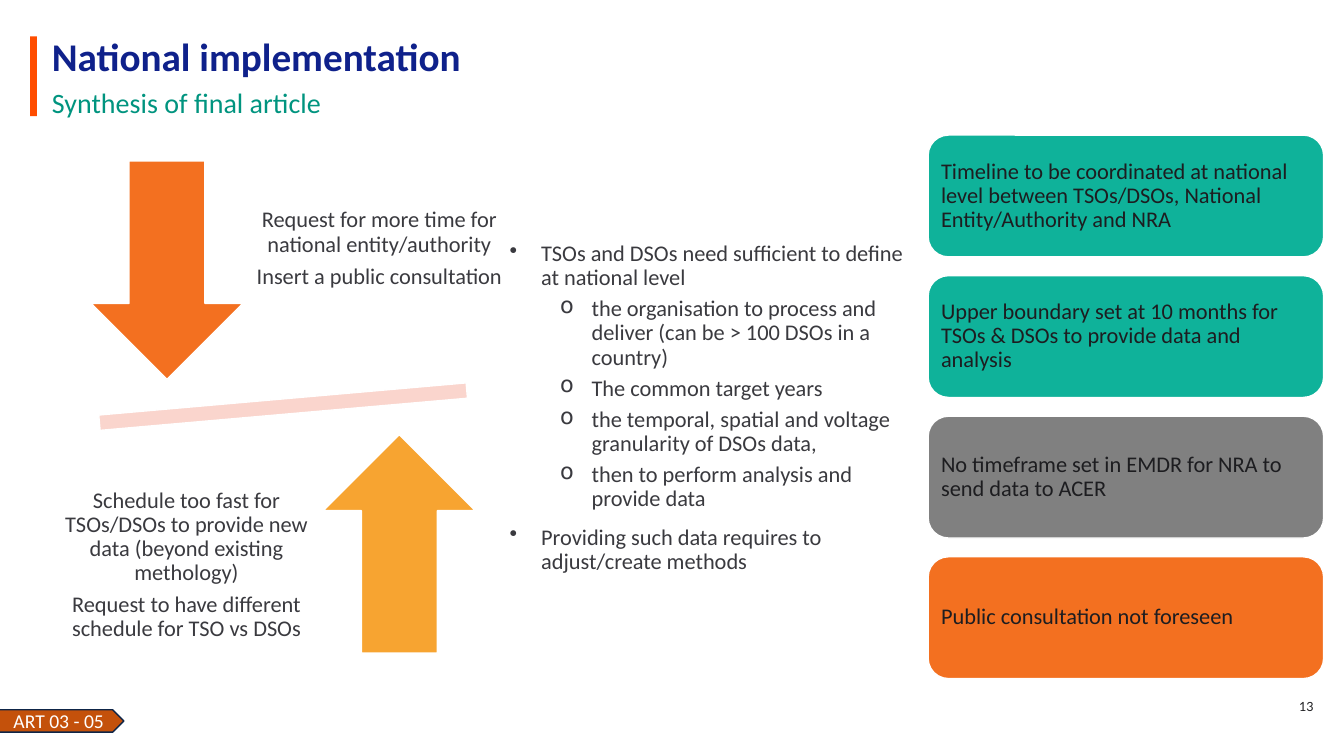
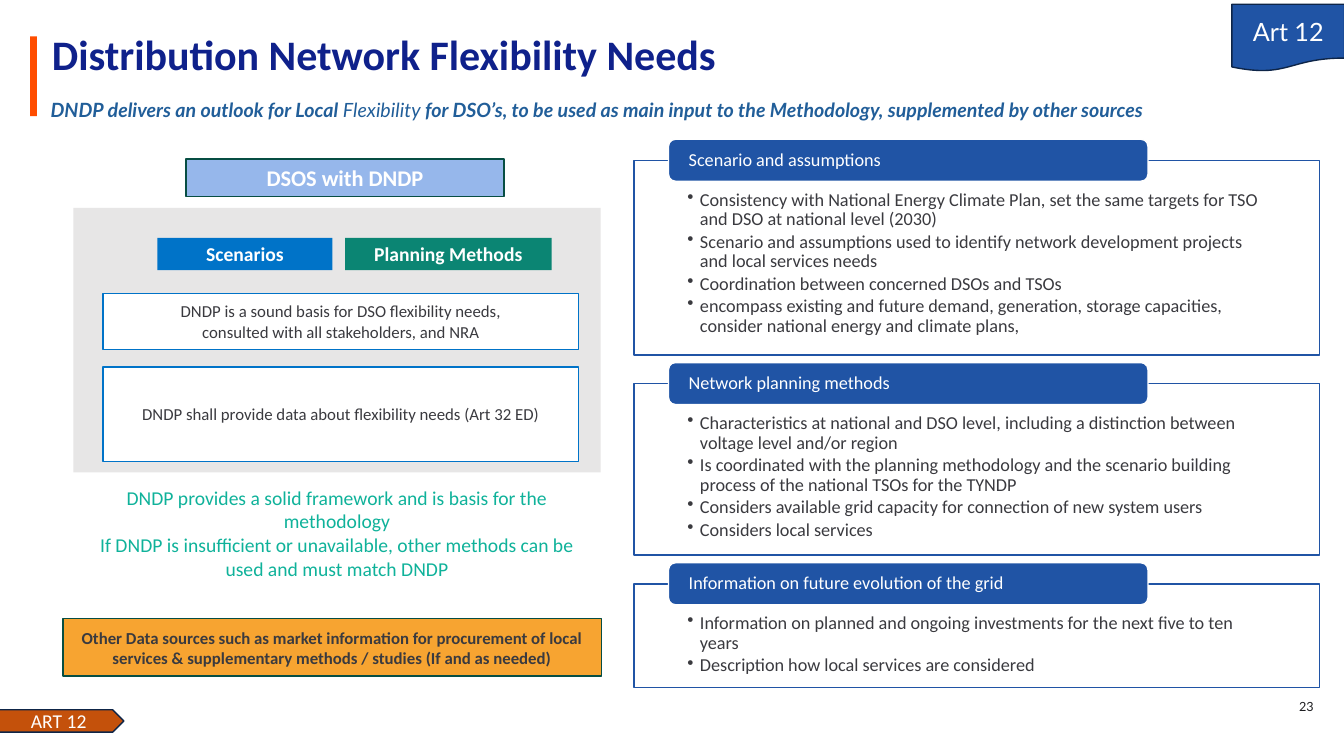
from lxml import etree
from pptx import Presentation
from pptx.dml.color import RGBColor
from pptx.enum import shapes, text
from pptx.oxml import ns
from pptx.util import Pt

NAVY = RGBColor(0x0F, 0x21, 0x8B)
INK = RGBColor(0x3A, 0x3A, 0x3F)
BLACK = RGBColor(0x1D, 0x1D, 0x20)
WHITE = RGBColor(0xFF, 0xFF, 0xFF)
GRAY = RGBColor(0x80, 0x80, 0x80)
PALE = RGBColor(0xE7, 0xE6, 0xE6)
BAR = RGBColor(0xFF, 0x4D, 0x00)
ORANGE = RGBColor(0xF3, 0x70, 0x20)
AMBER = RGBColor(0xF7, 0xA4, 0x31)
RUST = RGBColor(0xC4, 0x51, 0x0B)
PINK = RGBColor(0xFA, 0xD5, 0xCD)
TEAL = RGBColor(0x0F, 0xB2, 0x9A)
JADE = RGBColor(0x00, 0x94, 0x7F)
GREEN = RGBColor(0x0B, 0x85, 0x73)
FOREST = RGBColor(0x07, 0x4E, 0x43)
BLUE = RGBColor(0x20, 0x54, 0xA5)
AZURE = RGBColor(0x00, 0x73, 0xC8)
SKY = RGBColor(0x96, 0xB7, 0xEB)
STEEL = RGBColor(0x21, 0x5E, 0x99)
DARK = RGBColor(0x0E, 0x25, 0x48)

KIND = shapes.MSO_SHAPE
LEFT, MID, RIGHT = text.PP_ALIGN.LEFT, text.PP_ALIGN.CENTER, text.PP_ALIGN.RIGHT
TOP, HALF = text.MSO_ANCHOR.TOP, text.MSO_ANCHOR.MIDDLE
PAD = (7.2, 3.6, 7.2, 3.6)
DOT = ("•", 22.5, 22.5, 10)
RING = ("o", 58.5, 22.5, 5)
SMALL = ("•", 9, 9, 0)


class Deck:
    def __init__(self):
        self.file = Presentation()
        self.file.slide_width, self.file.slide_height = Pt(960), Pt(540)
        self.slide = None

    def page(self, title, size, number, label):
        self.slide = self.file.slides.add_slide(self.file.slide_layouts[6])
        self.text((486, 491, 459.5, 29), [number], 9, BLACK, font="Lato",
                  align=RIGHT, anchor=HALF, lead=Pt(9))
        self.shape(KIND.RECTANGLE, (21.5, 26, 5, 57), BAR)
        self.text((30, 26.5, 915, 28), [title], size, NAVY, bold=True,
                  anchor=HALF, lead=Pt(32))
        tag = self.shape(KIND.PENTAGON, (-0.5, 507, 89, 16), RUST, DARK)
        self.put(tag, [label], 14, WHITE, align=MID, anchor=HALF)

    def shape(self, kind, area, fill, line=None):
        item = self.slide.shapes.add_shape(kind, *map(Pt, area))
        item.shadow.inherit = False
        item.fill.solid()
        item.fill.fore_color.rgb = fill
        if line is None:
            item.line.fill.background()
        else:
            item.line.color.rgb = line
            item.line.width = Pt(1)
        return item

    def text(self, area, lines, size, color, **look):
        item = self.slide.shapes.add_textbox(*map(Pt, area))
        self.put(item, lines, size, color, **look)
        return item

    def put(self, item, lines, size, color, font="Calibri", bold=False,
            slant=False, align=LEFT, anchor=TOP, pad=PAD, lead=None, after=0):
        frame = item.text_frame
        frame.word_wrap = True
        frame.vertical_anchor = anchor
        (frame.margin_left, frame.margin_top,
         frame.margin_right, frame.margin_bottom) = map(Pt, pad)
        for i, line in enumerate(lines):
            para = frame.add_paragraph() if i else frame.paragraphs[0]
            para.alignment = align
            para.space_after = Pt(after)
            if lead:
                para.line_spacing = lead
            for part in line.split("|"):
                run = para.add_run()
                run.text = part
                run.font.name, run.font.size = font, Pt(size)
                run.font.bold, run.font.italic = bold, slant
                run.font.color.rgb = color

    def mark(self, item, marks):
        for i, (para, mark) in enumerate(zip(item.text_frame.paragraphs, marks)):
            sign, left, hang, gap = mark
            if i:
                para.space_before = Pt(gap)
            props = para._p.get_or_add_pPr()
            props.set("marL", str(Pt(left)))
            props.set("indent", str(-Pt(hang)))
            etree.SubElement(props, ns.qn("a:buChar")).set("char", sign)

    def label(self, area, fill, line, lines, size, color, bold=False):
        item = self.shape(KIND.RECTANGLE, area, fill, line)
        self.put(item, lines, size, color, bold=bold, align=MID, anchor=HALF)

    def card(self, top, fill, words):
        item = self.shape(KIND.ROUNDED_RECTANGLE, (663, top, 282.5, 87), fill, WHITE)
        self.put(item, [words], 16, BLACK, anchor=HALF, pad=(5,) * 4, lead=0.9)

    def force(self, kind, spot, fill, area, lines):
        self.shape(kind, (*spot, 108.5, 156), fill, WHITE)
        self.text(area, lines, 16, INK, align=MID, anchor=HALF,
                  pad=(8.5,) * 4, lead=0.9, after=5.6)

    def panel(self, top, high, head, lines):
        body = self.shape(KIND.RECTANGLE, (453, top, 489.5, high), WHITE, BLUE)
        self.put(body, lines, 13, INK, pad=(38, 21.5, 38, 7), lead=0.9, after=1.95)
        self.mark(body, [SMALL] * len(lines))
        tab = self.shape(KIND.ROUNDED_RECTANGLE, (477.5, top - 15, 342.5, 30), BLUE, WHITE)
        self.put(tab, [head], 13, WHITE, anchor=HALF, pad=(13, 0, 13, 0), lead=0.9)


def nation(deck):
    deck.page("National implementation", 28, "13", "ART 03 - 05")
    deck.text((30, 54.5, 915, 34.5), ["Synthesis of final article"], 20, JADE,
              anchor=HALF, lead=Pt(26))
    tasks = deck.text((357, 96, 305.5, 391), [
        "TSOs and DSOs need sufficient to define at national level",
        "the organisation to process and deliver (can be > 100 DSOs in a country)",
        "The common target years",
        "the temporal, spatial and voltage granularity of DSOs data,",
        "then to perform analysis and provide data",
        "Providing such data requires to adjust/create methods",
    ], 16, INK, anchor=HALF, lead=0.9)
    deck.mark(tasks, [DOT, *[RING] * 4, DOT])
    beam = deck.shape(KIND.MATH_MINUS, (23, 267, 358.5, 47), PINK, WHITE)
    beam.rotation = 355
    deck.force(KIND.DOWN_ARROW, (65, 115), ORANGE, (173, 96, 196, 163.5), [
        "Request for more time for national entity/authority",
        "Insert a public consultation"])
    deck.force(KIND.UP_ARROW, (231, 310.5), AMBER, (30, 322, 206.5, 163.5), [
        "Schedule too fast for TSOs/DSOs to provide new data (beyond existing methology)",
        "Request to have different schedule for TSO vs DSOs"])
    cards = [
        (TEAL, "Timeline to be coordinated at national level between TSOs/DSOs, "
               "National Entity/Authority and NRA"),
        (TEAL, "Upper boundary set at 10 months for TSOs & DSOs to provide data and analysis"),
        (GRAY, "No timeframe set in EMDR for NRA to send data to ACER"),
        (ORANGE, "Public consultation not foreseen"),
    ]
    for i, (fill, words) in enumerate(cards):
        deck.card(96.5 + 100.4 * i, fill, words)


def needs(deck):
    deck.page("Distribution Network Flexibility Needs", 30, "23", "ART 12")
    deck.shape(KIND.RECTANGLE, (52.5, 148.5, 376.5, 189), PALE)
    labels = [
        ((112.5, 170, 125, 23), AZURE, None, ["Scenarios"], 14, WHITE, True),
        ((246.5, 170, 147.5, 23), GREEN, None, ["Planning Methods"], 14, WHITE, True),
        ((73.5, 262, 340, 67.5), WHITE, AZURE,
         ["DNDP shall provide data about flexibility needs (Art 32 ED)"], 12, INK),
        ((73.5, 209.5, 340, 40), WHITE, AZURE,
         ["DNDP is a sound basis for DSO flexibility needs,",
          "consulted with all stakeholders, and NRA"], 12, INK),
        ((133, 113.5, 227, 27), SKY, FOREST, ["DSOS with DNDP"], 16, WHITE, True),
        ((45, 442, 384.5, 41), AMBER, FOREST,
         ["Other Data sources such as market information for procurement of local "
          "services & supplementary methods / studies (If and as needed)"], 12, INK, True),
    ]
    for label in labels:
        deck.label(*label)
    panels = [
        (139, "Scenario and assumptions", [
            "Consistency with National Energy Climate Plan, set the same targets "
            "for TSO and DSO at national level (2030)",
            "Scenario and assumptions used to identify network development projects "
            "and local services needs",
            "Coordination between concerned DSOs and TSOs",
            "encompass existing and future demand, generation, storage capacities, "
            "consider national energy and climate plans,"]),
        (122.5, "Network planning methods", [
            "Characteristics at national and DSO level, including a distinction "
            "between voltage level and/or region",
            "Is coordinated with the planning methodology and the scenario building "
            "process of the national TSOs for the TYNDP",
            "Considers available grid capacity for connection of new system users",
            "Considers local services"]),
        (74, "Information on future evolution of the grid", [
            "Information on planned and ongoing investments for the next five to ten years",
            "Description how local services are considered"]),
    ]
    top = 114.5
    for high, head, lines in panels:
        deck.panel(top, high, head, lines)
        top += high + 20.5
    deck.text((52.5, 343.5, 376.5, 75), [
        "DNDP provides a solid framework and is basis for the methodology",
        "If DNDP is insufficient or unavailable, other methods can be used and must match DNDP",
    ], 14, TEAL, align=MID)
    flag = deck.shape(KIND.FLOWCHART_DOCUMENT, (880, 3, 80.5, 48), BLUE, DARK)
    deck.put(flag, ["Art 12"], 18, WHITE, font="Lato", align=MID, anchor=HALF)
    lead = deck.text((29, 68.5, 903.5, 80), [
        "DNDP delivers an outlook for Local |Flexibility| for DSO’s, to be used as main "
        "input to the Methodology, supplemented by other sources",
    ], 14, STEEL, font="Lato", bold=True, slant=True, lead=0.9)
    lead.text_frame.paragraphs[0].runs[1].font.bold = False


def main():
    deck = Deck()
    nation(deck)
    needs(deck)
    deck.file.save("out.pptx")


if __name__ == "__main__":
    main()
